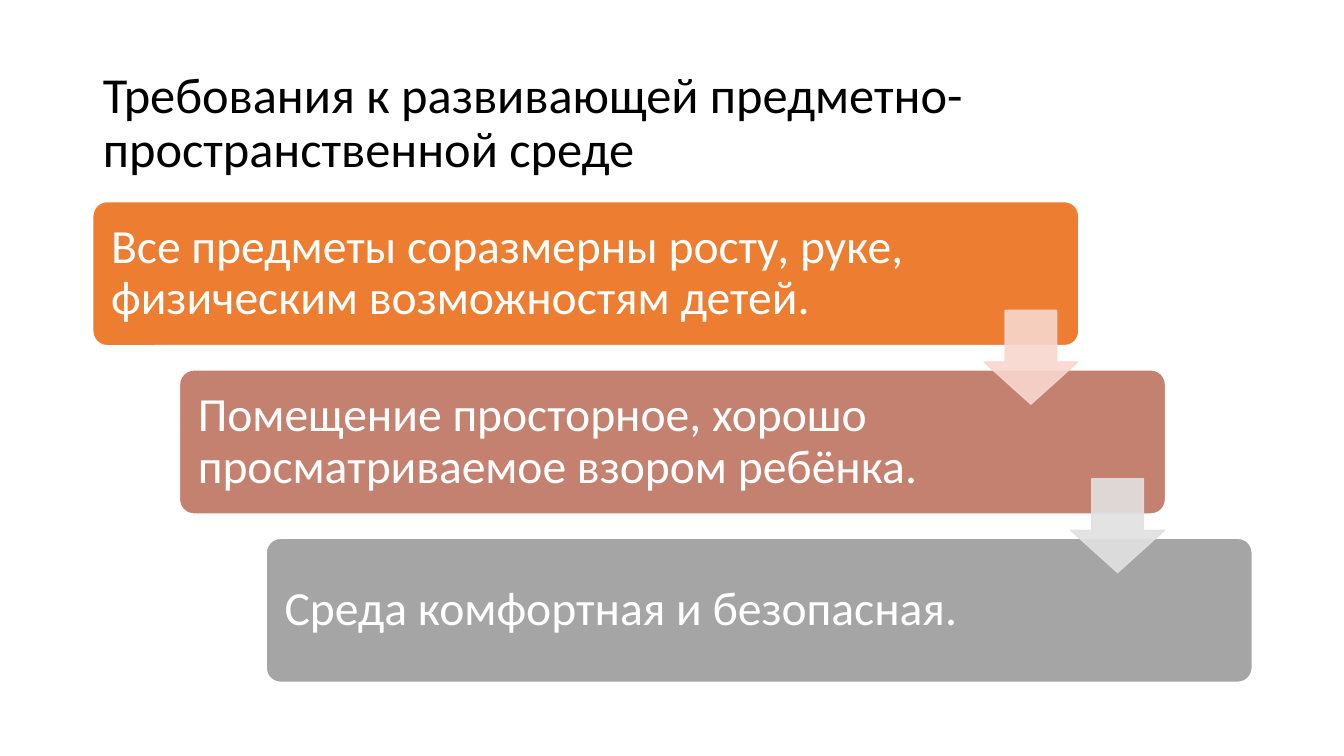
from dataclasses import dataclass

import pptx
import pptx.dml.color
import pptx.enum.shapes
import pptx.enum.text
import pptx.oxml.ns
import pptx.util
from lxml import etree
from pptx.util import Inches

SHAPE = pptx.enum.shapes.MSO_SHAPE
FONT = "Calibri"
STEP_X, STEP_Y = 0.86, 1.67


@dataclass
class Card:
    text: str
    color: str


@dataclass
class Arrow:
    color: str


CARDS = [
    Card("Все предметы соразмерны росту, руке, физическим возможностям детей.", "ED7D31"),
    Card("Помещение просторное, хорошо просматриваемое взором ребёнка.", "C48170"),
    Card("Среда комфортная и безопасная.", "A5A5A5"),
]
ARROWS = [Arrow("F8D7CE"), Arrow("E1E1E1")]


def set_color(target, value: str, alpha: int = 100) -> None:
    """Color a font, or a fill that is made solid, with opacity in percent."""
    if hasattr(target, "solid"):
        target.solid()
        color = target.fore_color
    else:
        color = target.color
    color.rgb = pptx.dml.color.RGBColor.from_string(value)
    if alpha < 100:
        node = color._xFill.find(pptx.oxml.ns.qn("a:srgbClr"))
        etree.SubElement(node, pptx.oxml.ns.qn("a:alpha"), val=str(alpha * 1000))


def set_text(tf, text: str, size: int, color: str) -> None:
    tf.text = text
    tf.word_wrap = True
    tf.auto_size = pptx.enum.text.MSO_AUTO_SIZE.NONE
    tf.vertical_anchor = pptx.enum.text.MSO_ANCHOR.MIDDLE
    p = tf.paragraphs[0]
    p.alignment = pptx.enum.text.PP_ALIGN.LEFT
    p.line_spacing = 0.9
    p.font.name = FONT
    p.font.size = pptx.util.Pt(size)
    set_color(p.font, color)


def add_block(s, kind, box: tuple, adjustments: list, fill: str, line: str, alpha: int = 100):
    sp = s.shapes.add_shape(kind, *map(Inches, box))
    sp.shadow.inherit = False
    for i, value in enumerate(adjustments):
        sp.adjustments[i] = value
    set_color(sp.fill, fill, alpha)
    set_color(sp.line.fill, line, alpha)
    sp.line.width = pptx.util.Pt(1)
    return sp


def draw_card(s, card: Card, i: int) -> None:
    box = (0.92 + i * STEP_X, 2 + i * STEP_Y, 9.78, 1.43)
    sp = add_block(s, SHAPE.ROUNDED_RECTANGLE, box, [0.1], card.color, "FFFFFF")
    tf = sp.text_frame
    set_text(tf, card.text, 34, "FFFFFF")
    tf.margin_left = tf.margin_top = tf.margin_bottom = Inches(0.14)
    tf.margin_right = Inches(1.6)  # room for the arrow


def draw_arrow(s, arrow: Arrow, i: int) -> None:
    box = (9.76 + i * STEP_X, 3.08 + i * STEP_Y, 0.93, 0.93)
    add_block(s, SHAPE.DOWN_ARROW, box, [0.55, 0.45], arrow.color, arrow.color, alpha=90)


def main() -> None:
    prs = pptx.Presentation()
    prs.slide_width, prs.slide_height = Inches(13.33), Inches(7.5)
    s = prs.slides.add_slide(prs.slide_layouts.get_by_name("Title Only"))

    # Title
    title = s.shapes.title
    title.left, title.top = Inches(0.92), Inches(0.61)
    title.width, title.height = Inches(11.5), Inches(1.24)
    set_text(title.text_frame, "Требования к развивающей предметно-пространственной среде", 36, "000000")

    # Staircase of cards, then the arrows over them
    for i, card in enumerate(CARDS):
        draw_card(s, card, i)
    for i, arrow in enumerate(ARROWS):
        draw_arrow(s, arrow, i)

    prs.save("out.pptx")


if __name__ == "__main__":
    main()
